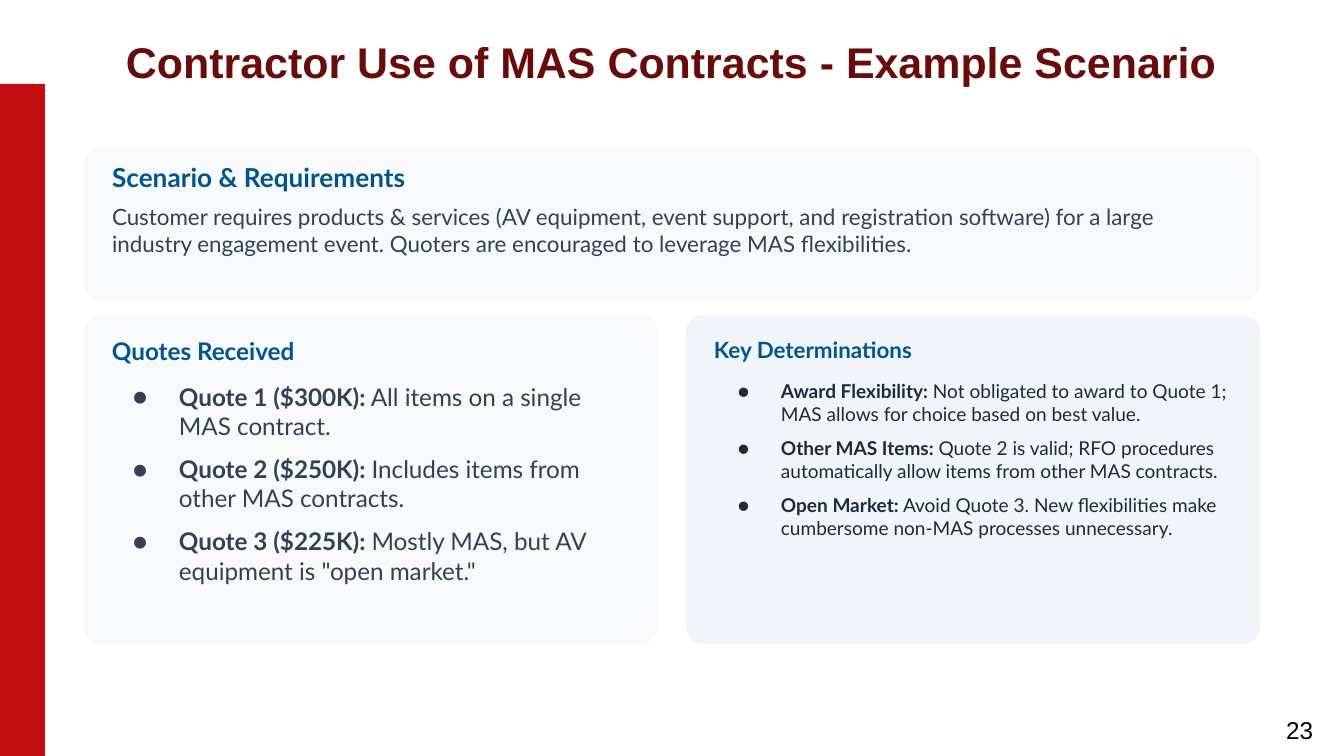
from dataclasses import dataclass

from lxml.etree import SubElement
from pptx import Presentation
from pptx.dml.color import RGBColor
from pptx.enum.shapes import MSO_SHAPE as Preset
from pptx.enum.text import MSO_ANCHOR as Anchor, PP_ALIGN as Align
from pptx.oxml.ns import qn
from pptx.util import Pt

EMU_PER_PX = 914400 / 134.4
SLIDE_W, SLIDE_H = 1344, 756
CARD_LEFT, CARD_WIDTH, CARD_GAP = 84, 1176, 28
CARD_RADIUS, CARD_PAD = 17, 28
LIST_TOP, LIST_HEIGHT = 315, 329
BULLET_MARGIN = 67


@dataclass(frozen=True)
class Theme:
    title_font: str = "Arial"
    body_font: str = "Lato"
    bar: str = "C20E0E"
    title: str = "690B0B"
    heading: str = "01558E"
    body: str = "334155"
    strong_body: str = "1E293B"
    page: str = "000000"
    card: str = "F8F9FA"
    accent_card: str = "F1F5F9"
    title_size: float = 23
    scenario_heading_size: float = 14
    scenario_size: float = 12
    quotes_size: float = 13
    key_heading_size: float = 12
    key_size: float = 10.2
    page_size: float = 13


THEME = Theme()

QUOTES = [
    ("Quote 1 ($300K):", " All items on a single MAS contract."),
    ("Quote 2 ($250K):", " Includes items from other MAS contracts."),
    ("Quote 3 ($225K):", ' Mostly MAS, but AV equipment is "open market."'),
]
DETERMINATIONS = [
    ("Award Flexibility:",
     " Not obligated to award to Quote 1; MAS allows for choice based on best value."),
    ("Other MAS Items:",
     " Quote 2 is valid; RFO procedures automatically allow items from other MAS contracts."),
    ("Open Market:",
     " Avoid Quote 3. New flexibilities make cumbersome non-MAS processes unnecessary."),
]


def px(length):
    return round(length * EMU_PER_PX)


def add_panel(slide, preset, box, color):
    panel = slide.shapes.add_shape(preset, *map(px, box))
    panel.shadow.inherit = False
    panel.fill.solid()
    panel.fill.fore_color.rgb = RGBColor.from_string(color)
    panel.line.fill.background()
    return panel


def add_text_frame(slide, box, inset=0, anchor=Anchor.TOP):
    frame = slide.shapes.add_textbox(*map(px, box)).text_frame
    frame.word_wrap = True
    frame.vertical_anchor = anchor
    frame.margin_left = frame.margin_right = px(inset)
    frame.margin_top = frame.margin_bottom = px(inset)
    return frame


def style_run(run, font, size, color, bold=False):
    run.font.name = font
    run.font.size = Pt(size)
    run.font.bold = bold
    run.font.color.rgb = RGBColor.from_string(color)


def add_label(slide, box, text, size, color, align, bold=False, **frame_options):
    label = add_text_frame(slide, box, **frame_options).paragraphs[0]
    label.text = text
    label.alignment = align
    style_run(label.runs[0], THEME.title_font, size, color, bold)


def add_card(slide, box, color, heading, heading_size, pad_y):
    left, top, width, height = box
    card = add_panel(slide, Preset.ROUNDED_RECTANGLE, box, color)
    card.adjustments[0] = CARD_RADIUS / min(width, height)
    frame = add_text_frame(slide, (left + CARD_PAD, top + pad_y,
                                   width - 2 * CARD_PAD, height - 2 * pad_y))
    frame.text = heading
    style_run(frame.paragraphs[0].runs[0], THEME.body_font, heading_size,
              THEME.heading, True)
    return frame


def set_bullet(paragraph, hang, color):
    properties = paragraph._p.get_or_add_pPr()
    properties.set("marL", str(px(BULLET_MARGIN)))
    properties.set("indent", str(-px(hang)))
    bullet_color = SubElement(properties, qn("a:buClr"))
    SubElement(bullet_color, qn("a:srgbClr"), val=color)
    SubElement(properties, qn("a:buFont"), typeface=THEME.body_font)
    SubElement(properties, qn("a:buChar"), char="●")


def add_bullets(frame, items, size, color, hang, gap):
    for index, (lead, detail) in enumerate(items):
        item = frame.add_paragraph()
        item.space_before = Pt(gap if index else 9)
        set_bullet(item, hang, color)
        for text, bold in ((lead, True), (detail, False)):
            run = item.add_run()
            run.text = text
            style_run(run, THEME.body_font, size, color, bold)


def add_scenario(slide):
    frame = add_card(slide, (CARD_LEFT, 147, CARD_WIDTH, 154), THEME.card,
                     "Scenario & Requirements", THEME.scenario_heading_size, 14)
    summary = frame.add_paragraph()
    summary.text = ("Customer requires products & services (AV equipment, event support, "
                    "and registration software) for a large industry engagement event. "
                    "Quoters are encouraged to leverage MAS flexibilities.")
    summary.space_before = Pt(6)
    style_run(summary.runs[0], THEME.body_font, THEME.scenario_size, THEME.body)


def add_lists(slide):
    width = (CARD_WIDTH - CARD_GAP) // 2
    quotes_box = (CARD_LEFT, LIST_TOP, width, LIST_HEIGHT)
    key_box = (CARD_LEFT + width + CARD_GAP, LIST_TOP, width, LIST_HEIGHT)
    quotes = add_card(slide, quotes_box, THEME.card, "Quotes Received",
                      THEME.quotes_size, 21)
    add_bullets(quotes, QUOTES, THEME.quotes_size, THEME.body, hang=46, gap=7.5)
    key = add_card(slide, key_box, THEME.accent_card, "Key Determinations",
                   THEME.key_heading_size, 21)
    add_bullets(key, DETERMINATIONS, THEME.key_size, THEME.strong_body, hang=43, gap=6)


def main():
    deck = Presentation()
    deck.slide_width, deck.slide_height = px(SLIDE_W), px(SLIDE_H)
    slide = deck.slides.add_slide(deck.slide_layouts[6])
    add_panel(slide, Preset.RECTANGLE, (0, 84, 45, 672), THEME.bar)
    add_label(slide, (105, 18, 1134, 86),
              "Contractor Use of MAS Contracts - Example Scenario",
              THEME.title_size, THEME.title, Align.CENTER, True, anchor=Anchor.MIDDLE)
    add_scenario(slide)
    add_lists(slide)
    add_label(slide, (1246, 702, 80, 54), "23", THEME.page_size, THEME.page,
              Align.RIGHT, inset=13)
    deck.save("out.pptx")


if __name__ == "__main__":
    main()
